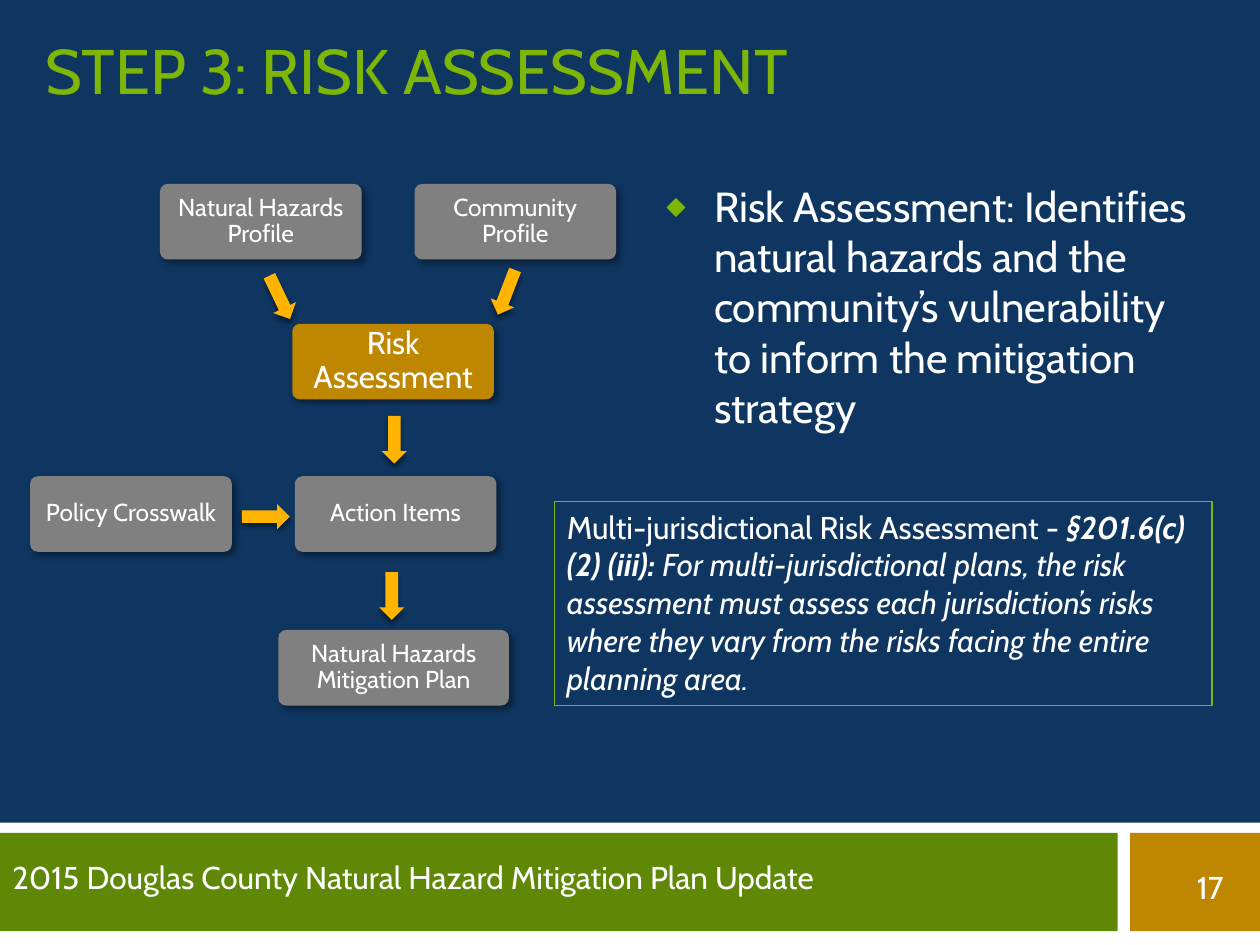
from lxml import etree
from pptx import Presentation
from pptx.dml.color import RGBColor
from pptx.enum.shapes import MSO_SHAPE
from pptx.enum.text import MSO_ANCHOR, PP_ALIGN
from pptx.oxml.ns import qn
from pptx.util import Inches, Pt

RECTANGLE = MSO_SHAPE.RECTANGLE
ROUNDED = MSO_SHAPE.ROUNDED_RECTANGLE
ARROW = MSO_SHAPE.LEFT_ARROW
TOP, MIDDLE, BOTTOM = MSO_ANCHOR.TOP, MSO_ANCHOR.MIDDLE, MSO_ANCHOR.BOTTOM
LEFT, CENTER = PP_ALIGN.LEFT, PP_ALIGN.CENTER

FONT = "Cabin"
NAVY, WHITE, GRAY = "0F3661", "FFFFFF", "808080"
LIME, GREEN, GOLD, YELLOW = "7EB606", "5E8805", "BF8700", "FFB400"
BOX_SHADOW = dict(alpha=40, blur=4, distance=3, angle=45)
ARROW_SHADOW = dict(alpha=45, blur=3, distance=2.4, angle=90)

FOOTER_BANDS = [
    (0, 6.53, 10, 0.97, WHITE),
    (8.97, 6.61, 1.03, 0.78, GOLD),
    (0, 6.61, 8.87, 0.78, GREEN),
]
FLOW_BOXES = [
    ("Natural Hazards Profile", 1.27, 1.46, 1.6, GRAY, 14),
    ("Community Profile", 3.29, 1.46, 1.6, GRAY, 14),
    ("Risk Assessment", 2.32, 2.57, 1.6, GOLD, 18),
    ("Action Items", 2.34, 3.78, 1.6, GRAY, 14),
    ("Policy Crosswalk", 0.24, 3.78, 1.6, GRAY, 14),
    ("Natural Hazards Mitigation Plan", 2.21, 5, 1.83, GRAY, 14),
]
FLOW_ARROWS = [
    (1.92, 4, 180),
    (2.94, 3.39, 270),
    (2.92, 4.63, 270),
    (2.03, 2.26, 244.5),
    (3.83, 2.22, 291),
]
BOX_HEIGHT, ARROW_WIDTH, ARROW_HEIGHT = 0.6, 0.38, 0.2

TITLE = "STEP 3: RISK ASSESSMENT"
FOOTER = "2015 Douglas County Natural Hazard Mitigation Plan Update"
DEFINITION = ("Risk Assessment: Identifies natural hazards and the community’s "
              "vulnerability to inform the mitigation strategy")
REGULATION = [
    ("Multi-jurisdictional Risk Assessment - ", False, False),
    ("§201.6(c)(2) (iii): ", True, True),
    ("For multi-jurisdictional plans, the risk assessment must assess each "
     "jurisdiction’s risks where they vary from the risks facing the entire "
     "planning area.", False, True),
]


def color(value):
    return RGBColor.from_string(value)


def add_shadow(shape, alpha, blur, distance, angle):
    effects = shape._element.spPr.find(qn("a:effectLst"))
    outer = etree.SubElement(
        effects, qn("a:outerShdw"), blurRad=str(Pt(blur)), dist=str(Pt(distance)),
        dir=str(angle * 60000), algn="ctr", rotWithShape="0")
    black = etree.SubElement(outer, qn("a:srgbClr"), val="000000")
    etree.SubElement(black, qn("a:alpha"), val=str(alpha * 1000))


def add_panel(slide, kind, box, fill=None, line=None, shadow=None):
    shape = slide.shapes.add_shape(kind, *map(Inches, box))
    if fill:
        shape.fill.solid()
        shape.fill.fore_color.rgb = color(fill)
    else:
        shape.fill.background()
    if line:
        shape.line.color.rgb = color(line)
        shape.line.width = Pt(0.75)
    else:
        shape.line.fill.background()
    shape.shadow.inherit = False
    if shadow:
        add_shadow(shape, **shadow)
    return shape


def add_diamond_bullet(paragraph):
    properties = paragraph._p.get_or_add_pPr()
    properties.set("marL", str(Inches(0.38)))
    properties.set("indent", str(-Inches(0.38)))
    tint = etree.SubElement(properties, qn("a:buClr"))
    etree.SubElement(tint, qn("a:srgbClr"), val=LIME)
    etree.SubElement(properties, qn("a:buSzPct"), val="60000")
    etree.SubElement(properties, qn("a:buFont"), typeface=FONT)
    etree.SubElement(properties, qn("a:buChar"), char="◆")


def write_text(shape, text, size=18, fill=WHITE, align=LEFT, anchor=TOP,
               spacing=None, margin=None, bullet=False):
    frame = shape.text_frame
    frame.word_wrap = True
    frame.vertical_anchor = anchor
    if margin is not None:
        frame.margin_left = frame.margin_right = Inches(margin)
        frame.margin_top = frame.margin_bottom = Inches(margin)
    paragraph = frame.paragraphs[0]
    if bullet:
        add_diamond_bullet(paragraph)
    paragraph.alignment = align
    if spacing:
        paragraph.line_spacing = spacing
    runs = [(text, False, False)] if isinstance(text, str) else text
    for words, bold, italic in runs:
        run = paragraph.add_run()
        run.text = words
        font = run.font
        font.name, font.size = FONT, Pt(size)
        font.bold, font.italic = bold, italic
        font.color.rgb = color(fill)


def add_text(slide, text, box, **text_format):
    write_text(slide.shapes.add_textbox(*map(Inches, box)), text, **text_format)


def main():
    """Build the risk assessment slide."""
    presentation = Presentation()
    presentation.slide_width, presentation.slide_height = Inches(10), Inches(7.5)
    slide = presentation.slides.add_slide(presentation.slide_layouts[6])
    slide.background.fill.solid()
    slide.background.fill.fore_color.rgb = color(NAVY)

    for *box, fill in FOOTER_BANDS:
        add_panel(slide, RECTANGLE, box, fill=fill)
    add_text(slide, FOOTER, (0, 6.76, 8.87, 0.4))
    add_text(slide, TITLE, (0.26, 0.19, 9.36, 0.71), size=36, fill=LIME, anchor=BOTTOM)

    for label, left, top, width, fill, size in FLOW_BOXES:
        shape = add_panel(slide, ROUNDED, (left, top, width, BOX_HEIGHT),
                          fill=fill, shadow=BOX_SHADOW)
        shape.adjustments[0] = 0.1
        write_text(shape, label, size=size, align=CENTER, anchor=MIDDLE,
                   spacing=0.9, margin=0.02)
    for left, top, angle in FLOW_ARROWS:
        arrow = add_panel(slide, ARROW, (left, top, ARROW_WIDTH, ARROW_HEIGHT),
                          fill=YELLOW, shadow=ARROW_SHADOW)
        arrow.rotation = angle

    add_text(slide, DEFINITION, (5.19, 1.38, 4.47, 2.12), size=24, bullet=True)
    add_text(slide, "17", (9.4, 6.84, 0.6, 0.42))
    write_text(add_panel(slide, RECTANGLE, (4.4, 3.98, 5.22, 1.62), line=LIME), REGULATION)
    presentation.save("out.pptx")


if __name__ == "__main__":
    main()
